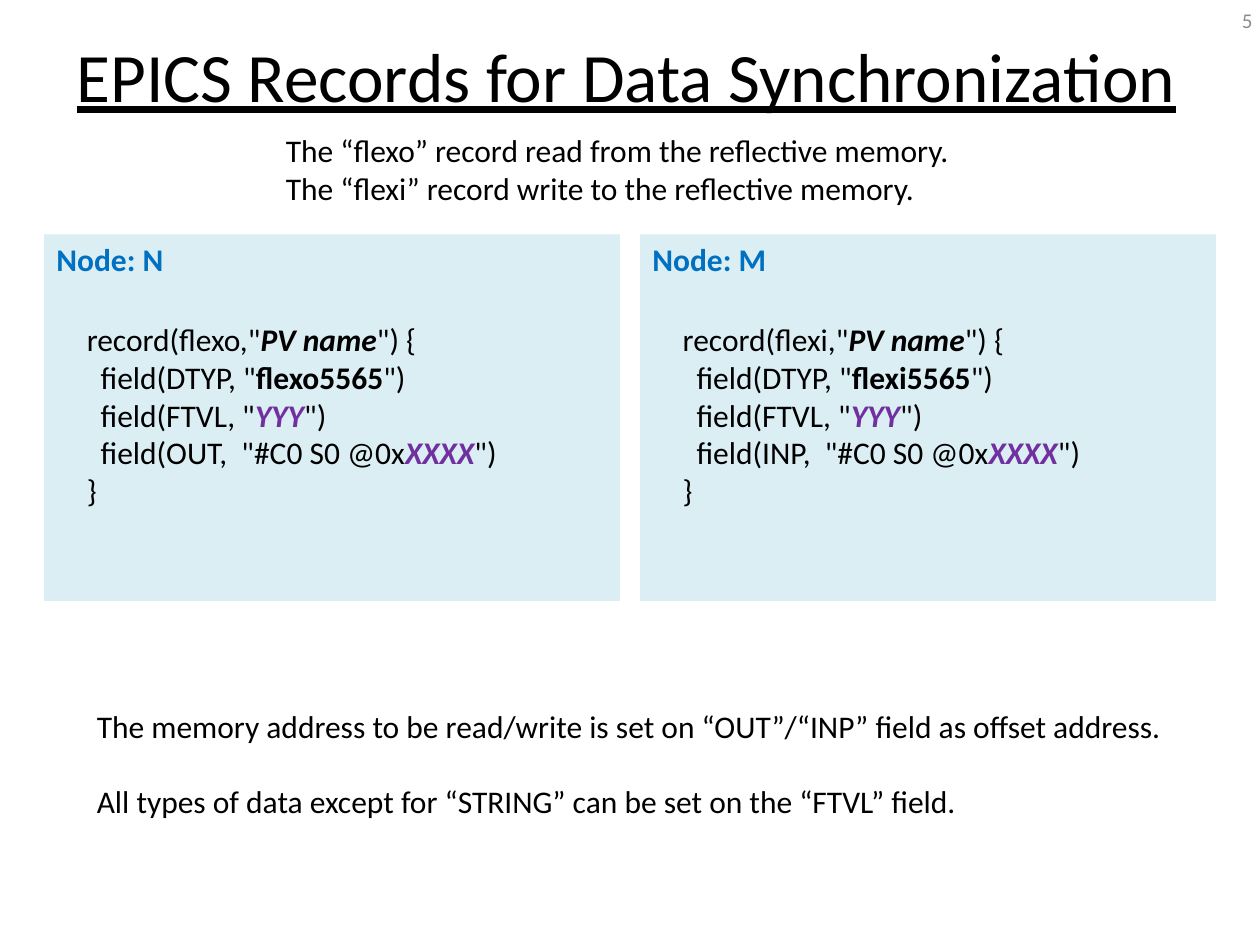
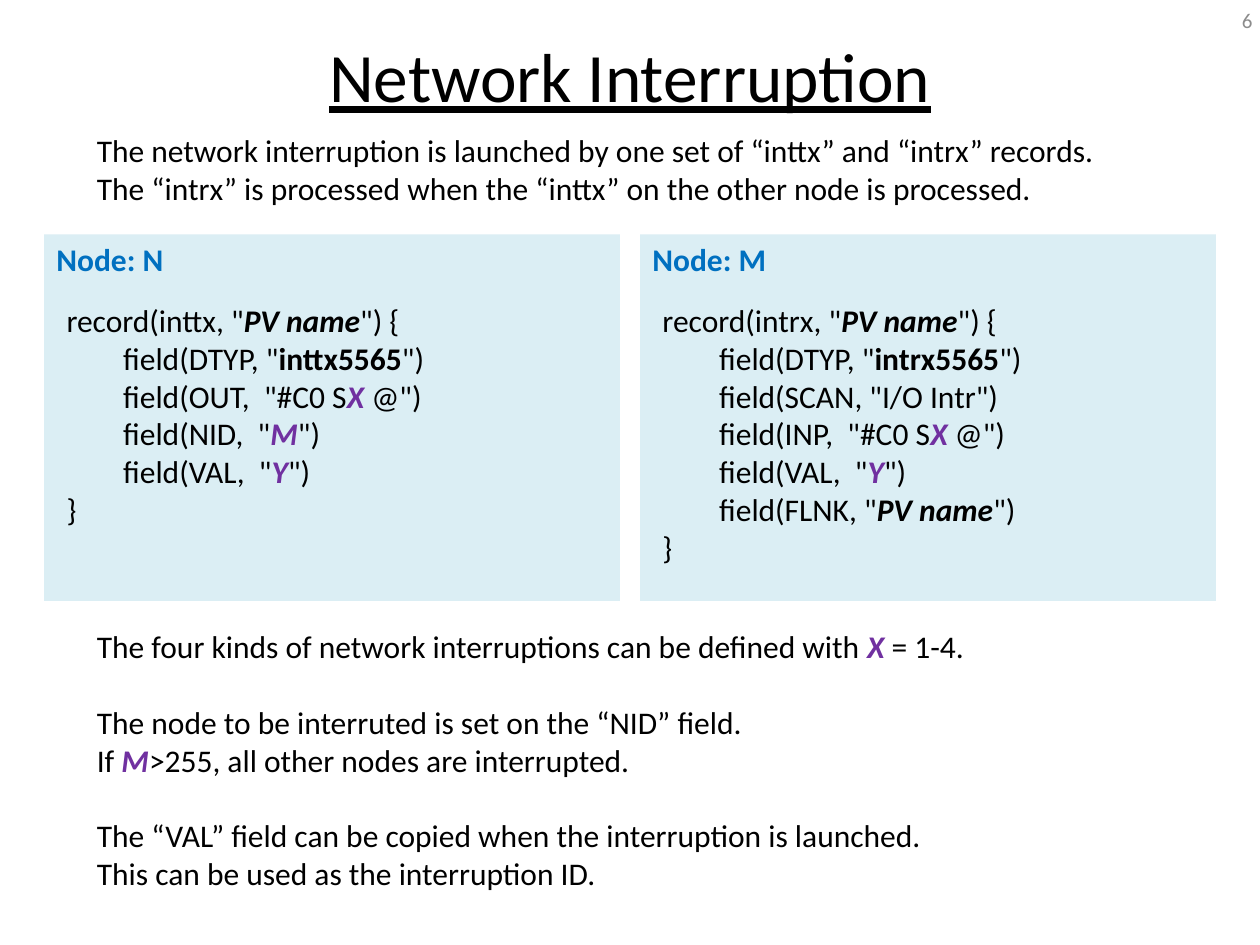
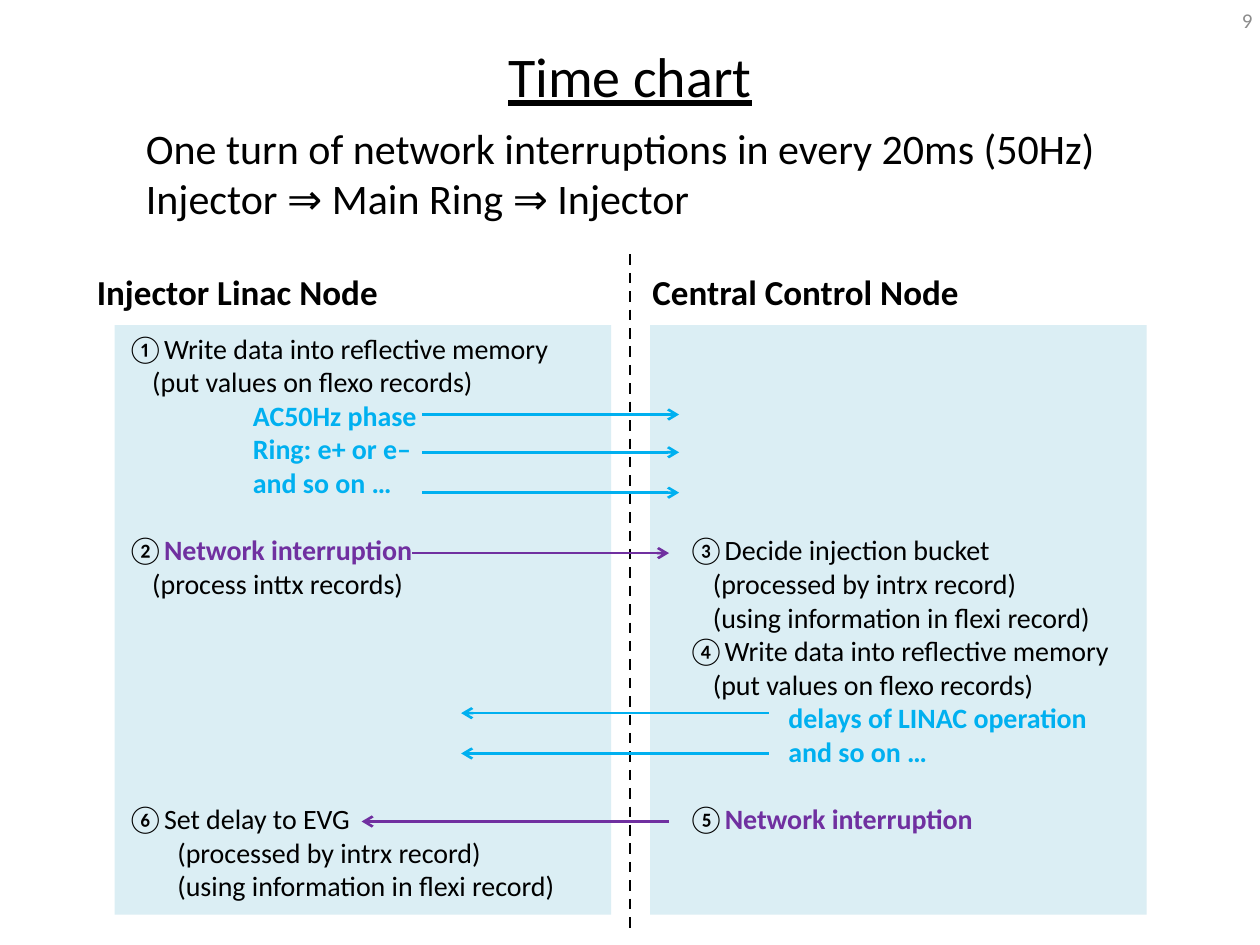
from dataclasses import dataclass

from lxml import etree
from pptx import Presentation
from pptx.dml.color import RGBColor
from pptx.enum.dml import MSO_LINE
from pptx.enum.shapes import MSO_CONNECTOR, MSO_SHAPE
from pptx.enum.text import MSO_ANCHOR, MSO_AUTO_SIZE, PP_ALIGN
from pptx.oxml.ns import qn
from pptx.util import Inches, Pt

RECTANGLE = MSO_SHAPE.RECTANGLE
STRAIGHT = MSO_CONNECTOR.STRAIGHT
DASH = MSO_LINE.DASH
TOP, MIDDLE = MSO_ANCHOR.TOP, MSO_ANCHOR.MIDDLE
LEFT, CENTER, RIGHT = PP_ALIGN.LEFT, PP_ALIGN.CENTER, PP_ALIGN.RIGHT
NO_AUTOFIT = MSO_AUTO_SIZE.NONE


@dataclass(frozen=True)
class Theme:
    font: str = "Calibri"
    black: str = "000000"
    grey: str = "8C8C8C"
    panel: str = "DBEEF4"
    blue: str = "0070C0"
    cyan: str = "00B0F0"
    purple: str = "7030A0"
    title: float = 39.6
    small_title: float = 32
    intro: float = 24
    heading: float = 20
    body: float = 18
    step: float = 16
    number: float = 12
    line_spacing: float = 1.2
    line_width: float = 1.5


THEME = Theme()

# Run styles: colour, bold, italic
PLAIN = (THEME.black, False, False)
BOLD = (THEME.black, True, False)
NAME = (THEME.black, True, True)
VARIABLE = (THEME.purple, True, True)
NODE = (THEME.blue, True, False)
DATA = (THEME.cyan, True, False)
SIGNAL = (THEME.purple, True, False)
MUTED = (THEME.grey, False, False)


def write(frame, lines, size, align=LEFT, anchor=TOP, underline=None):
    """Each line is (indent in inches, empty lines above, run, run, ...)."""
    frame.word_wrap = True
    frame.auto_size = NO_AUTOFIT
    frame.vertical_anchor = anchor
    for index, (indent, gap, *runs) in enumerate(lines):
        paragraph = frame.paragraphs[0] if index == 0 else frame.add_paragraph()
        paragraph.alignment = align
        space = Pt(round(gap * size * THEME.line_spacing, 1))
        if index == 0:
            frame.margin_top = Inches(0.05) + space
        else:
            paragraph.space_before = space
        if indent:
            paragraph._p.get_or_add_pPr().set("marL", str(Inches(indent)))
        for part in runs:
            text, (colour, bold, italic) = (part, PLAIN) if isinstance(part, str) else part
            run = paragraph.add_run()
            run.text = text
            font = run.font
            font.name, font.size = THEME.font, Pt(size)
            font.bold, font.italic, font.underline = bold, italic, underline
            font.color.rgb = RGBColor.from_string(colour)


def add_block(slide, box, lines, size, panel=False, **layout):
    area = [Inches(length) for length in box]
    if panel:
        block = slide.shapes.add_shape(RECTANGLE, *area)
        block.shadow.inherit = False
        block.fill.solid()
        block.fill.fore_color.rgb = RGBColor.from_string(THEME.panel)
        block.line.fill.background()
    else:
        block = slide.shapes.add_textbox(*area)
    write(block.text_frame, lines, size, **layout)


deck = Presentation()
deck.slide_width, deck.slide_height = Inches(10), Inches(7.5)
title_only = deck.slide_layouts[5]

# Titles and page numbers
pages = []
for heading, size, left, width, number in (
    ("EPICS Records for Data Synchronization", THEME.title, 0.22, 9.5, "5"),
    ("Network Interruption", THEME.title, 0.5, 9, "6"),
    ("Time chart", THEME.small_title, 0.5, 9, "9"),
):
    page = deck.slides.add_slide(title_only)
    title = page.shapes.title
    title.left, title.top = Inches(left), Inches(0.21)
    title.width, title.height = Inches(width), Inches(0.77)
    write(title.text_frame, [(0, 0, heading)], size, CENTER, MIDDLE, underline=True)
    add_block(page, (9.63, -0.04, 0.41, 0.4), [(0, 0, (number, MUTED))],
              THEME.number, align=RIGHT, anchor=MIDDLE)
    pages.append(page)
sync_page, interrupt_page, chart_page = pages

# Node panels shared by the two record slides
node_lefts = {"N": 0.35, "M": 5.08}
for page in (sync_page, interrupt_page):
    for node, left in node_lefts.items():
        add_block(page, (left, 1.86, 4.57, 2.91), [], THEME.body, panel=True)
        add_block(page, (left, 1.86, 1.14, 0.4), [(0, 0, (f"Node: {node}", NODE))], THEME.body)

# Data synchronization: records
for node, record, link in (("N", "flexo", "OUT"), ("M", "flexi", "INP")):
    add_block(sync_page, (node_lefts[node] + 0.24, 2.49, 3.78, 1.62), [
        (0, 0, f'record({record},"', ("PV name", NAME), '") {'),
        (0.11, 0, 'field(DTYP, "', (f"{record}5565", BOLD), '")'),
        (0.11, 0, 'field(FTVL, "', ("YYY", VARIABLE), '")'),
        (0.11, 0, f'field({link},  "#C0 S0 @0x', ("XXXX", VARIABLE), '")'),
        (0, 0, "}"),
    ], THEME.body)

# Data synchronization: explanations
add_block(sync_page, (2.17, 0.99, 5.59, 0.71), [
    (0, 0, "The “flexo” record read from the reflective memory."),
    (0, 0, "The “flexi” record write to the reflective memory."),
], THEME.body)
add_block(sync_page, (0.67, 5.56, 8.74, 1.01), [
    (0, 0, "The memory address to be read/write is set on “OUT”/“INP” field as offset address."),
    (0, 1, "All types of data except for “STRING” can be set on the “FTVL” field."),
], THEME.body)

# Network interruption: records
value_field = (0.45, 0, 'field(VAL,  "', ("Y", VARIABLE), '")')
interrupt_fields = {
    "inttx": ("N", [
        (0.45, 0, 'field(OUT,  "#C0 S', ("X ", VARIABLE), '@")'),
        (0.45, 0, 'field(NID,  "', ("M", VARIABLE), '")'),
        value_field,
    ]),
    "intrx": ("M", [
        (0.45, 0, 'field(SCAN, "I/O Intr")'),
        (0.45, 0, 'field(INP,  "#C0 S', ("X", VARIABLE), ' @")'),
        value_field,
        (0.45, 0, 'field(FLNK, "', ("PV name", NAME), '")'),
    ]),
}
for record, (node, fields) in interrupt_fields.items():
    add_block(interrupt_page, (node_lefts[node] + 0.08, 2.34, 3.3, 2.22), [
        (0, 0, f'record({record}, "', ("PV name", NAME), '") {'),
        (0.45, 0, 'field(DTYP, "', (f"{record}5565", BOLD), '")'),
        *fields,
        (0, 0, "}"),
    ], THEME.body)

# Network interruption: explanations
add_block(interrupt_page, (0.67, 0.99, 8.58, 0.71), [
    (0, 0, "The network interruption is launched by one set of “inttx” and “intrx” records."),
    (0, 0, "The “intrx” is processed when the “inttx” on the other node is processed."),
], THEME.body)
add_block(interrupt_page, (0.67, 4.93, 8.58, 2.22), [
    (0, 0, "The four kinds of network interruptions can be defined with ",
     ("X", VARIABLE), " = 1-4."),
    (0, 1, "The node to be interruted is set on the “NID” field."),
    (0, 0, "If ", ("M", VARIABLE), ">255, all other nodes are interrupted."),
    (0, 1, "The “VAL” field can be copied when the interruption is launched."),
    (0, 0, "This can be used as the interruption ID."),
], THEME.body)

# Time chart: introduction and node headings
add_block(chart_page, (1.06, 0.92, 7.87, 0.91), [
    (0, 0, "One turn of network interruptions in every 20ms (50Hz)"),
    (0, 0, "Injector ⇒ Main Ring ⇒ Injector"),
], THEME.intro)
add_block(chart_page, (0.67, 2.1, 2.52, 0.44),
          [(0, 0, ("Injector Linac Node", BOLD))], THEME.heading)
add_block(chart_page, (5.08, 2.1, 2.91, 0.44),
          [(0, 0, ("Central Control Node", BOLD))], THEME.heading)

# Time chart: steps of each node
add_block(chart_page, (0.91, 2.58, 3.94, 4.68), [
    (0, 0, "①Write data into reflective memory"),
    (0.2, 0, "(put values on flexo records)"),
    (1, 0, ("AC50Hz phase", DATA)),
    (1, 0, ("Ring: e+ or e–", DATA)),
    (1, 0, ("and so on …", DATA)),
    (0, 1, "②", ("Network interruption", SIGNAL)),
    (0.2, 0, "(process inttx records)"),
    (0, 6, "⑥Set delay to EVG"),
    (0.4, 0, "(processed by intrx record)"),
    (0.4, 0, "(using information in flexi record)"),
], THEME.step, panel=True)
add_block(chart_page, (5.16, 2.58, 3.94, 4.68), [
    (0.2, 6, "③Decide injection bucket"),
    (0.4, 0, "(processed by intrx record)"),
    (0.4, 0, "(using information in flexi record)"),
    (0.2, 0, "④Write data into reflective memory"),
    (0.4, 0, "(put values on flexo records)"),
    (1, 0, ("delays of LINAC operation", DATA)),
    (1, 0, ("and so on …", DATA)),
    (0.2, 1, "⑤", ("Network interruption", SIGNAL)),
], THEME.step, panel=True)

# Time chart: divider (dashed) and messages between the nodes (arrows)
for start_x, start_y, end_x, end_y, colour, is_message in (
    (5, 2.02, 5, 7.41, THEME.black, False),
    (3.35, 3.29, 5.39, 3.29, THEME.cyan, True),
    (3.35, 3.59, 5.39, 3.59, THEME.cyan, True),
    (3.35, 3.91, 5.39, 3.91, THEME.cyan, True),
    (3.27, 4.39, 5.31, 4.39, THEME.purple, True),
    (6.1, 5.66, 3.66, 5.66, THEME.cyan, True),
    (6.1, 5.98, 3.66, 5.98, THEME.cyan, True),
    (5.31, 6.52, 2.87, 6.52, THEME.purple, True),
):
    link = chart_page.shapes.add_connector(
        STRAIGHT, Inches(start_x), Inches(start_y), Inches(end_x), Inches(end_y))
    link.line.color.rgb = RGBColor.from_string(colour)
    link.line.width = Pt(THEME.line_width)
    if is_message:
        etree.SubElement(link.line._get_or_add_ln(), qn("a:tailEnd"), type="arrow")
    else:
        link.line.dash_style = DASH
    etree.SubElement(link._element.spPr, qn("a:effectLst"))

deck.save("out.pptx")
